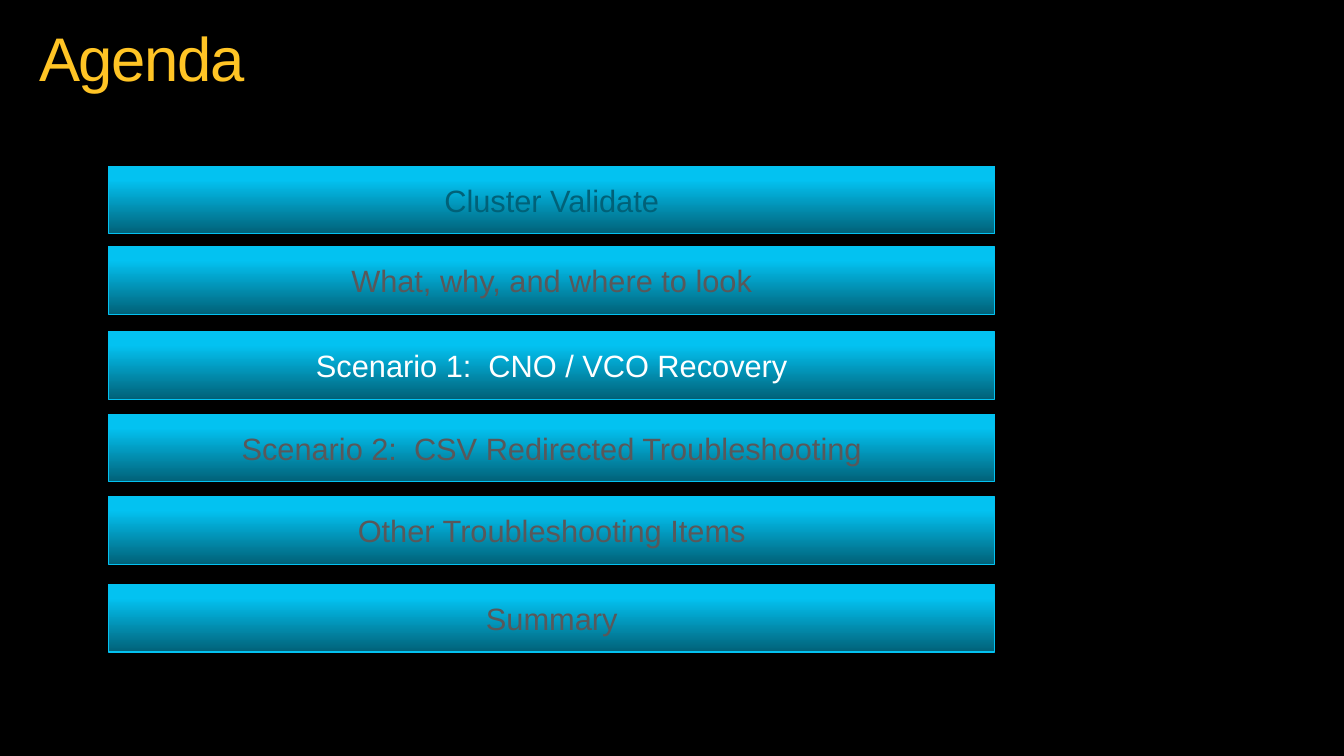
from pptx import Presentation
from pptx.dml.color import RGBColor
from pptx.enum.shapes import MSO_SHAPE
from pptx.enum.text import MSO_ANCHOR, PP_ALIGN
from pptx.util import Cm, Pt

BLACK, GOLD, WHITE = "000000", "FFC425", "FFFFFF"
CYAN, TEAL, GREY = "03C2F1", "016178", "59585A"

BAR_LEFT, BAR_WIDTH, BAR_HEIGHT = Cm(2.74), Cm(22.33), Cm(1.7)
AGENDA = [
    (4.19, "Cluster Validate", TEAL),
    (6.22, "What, why, and where to look", GREY),
    (8.36, "Scenario 1:  CNO / VCO Recovery", WHITE),
    (10.44, "Scenario 2:  CSV Redirected Troubleshooting", GREY),
    (12.52, "Other Troubleshooting Items", GREY),
    (14.73, "Summary", GREY),
]
TITLE_FRAME = {
    "word_wrap": True,
    "vertical_anchor": MSO_ANCHOR.MIDDLE,
    "margin_left": 0,
    "margin_right": 0,
    "margin_top": 0,
    "margin_bottom": 0,
}
BAR_FRAME = {"word_wrap": True, "vertical_anchor": MSO_ANCHOR.MIDDLE}


def rgb(hex_color):
    return RGBColor.from_string(hex_color)


def apply_format(target, values):
    for name, value in values.items():
        setattr(target, name, value)


def write(shape, text, size, color, frame_format, paragraph_format):
    """Fill a shape with one line of text and return its run."""
    frame = shape.text_frame
    apply_format(frame, frame_format)
    paragraph = frame.paragraphs[0]
    apply_format(paragraph, paragraph_format)
    run = paragraph.add_run()
    run.text = text
    apply_format(run.font, {"name": "Arial", "size": Pt(size)})
    run.font.color.rgb = rgb(color)
    return run


def add_title(slide, text):
    title = slide.shapes.add_textbox(Cm(0.99), Cm(0.43), Cm(25.9), Cm(2.26))
    run = write(title, text, 44, GOLD, TITLE_FRAME, {"line_spacing": 0.9})
    run._r.get_or_add_rPr().set("spc", "-100")


def add_agenda_bar(slide, top, topic, color):
    bar = slide.shapes.add_shape(
        MSO_SHAPE.ROUNDED_RECTANGLE, BAR_LEFT, Cm(top), BAR_WIDTH, BAR_HEIGHT
    )
    bar.adjustments[0] = 0
    bar.shadow.inherit = False
    bar.fill.gradient()
    bar.fill.gradient_angle = 90
    for stop, position, shade in zip(bar.fill.gradient_stops, (0, 0.8), (TEAL, CYAN)):
        stop.position = position
        stop.color.rgb = rgb(shade)
    bar.line.color.rgb = rgb(CYAN)
    bar.line.width = Pt(0.75)
    write(bar, topic, 22, color, BAR_FRAME, {"alignment": PP_ALIGN.CENTER})


def main():
    presentation = Presentation()
    apply_format(presentation, {"slide_width": Cm(33.87), "slide_height": Cm(19.05)})
    slide = presentation.slides.add_slide(presentation.slide_layouts[6])
    slide.background.fill.solid()
    slide.background.fill.fore_color.rgb = rgb(BLACK)
    add_title(slide, "Agenda")
    for top, topic, color in AGENDA:
        add_agenda_bar(slide, top, topic, color)
    presentation.save("out.pptx")


if __name__ == "__main__":
    main()
